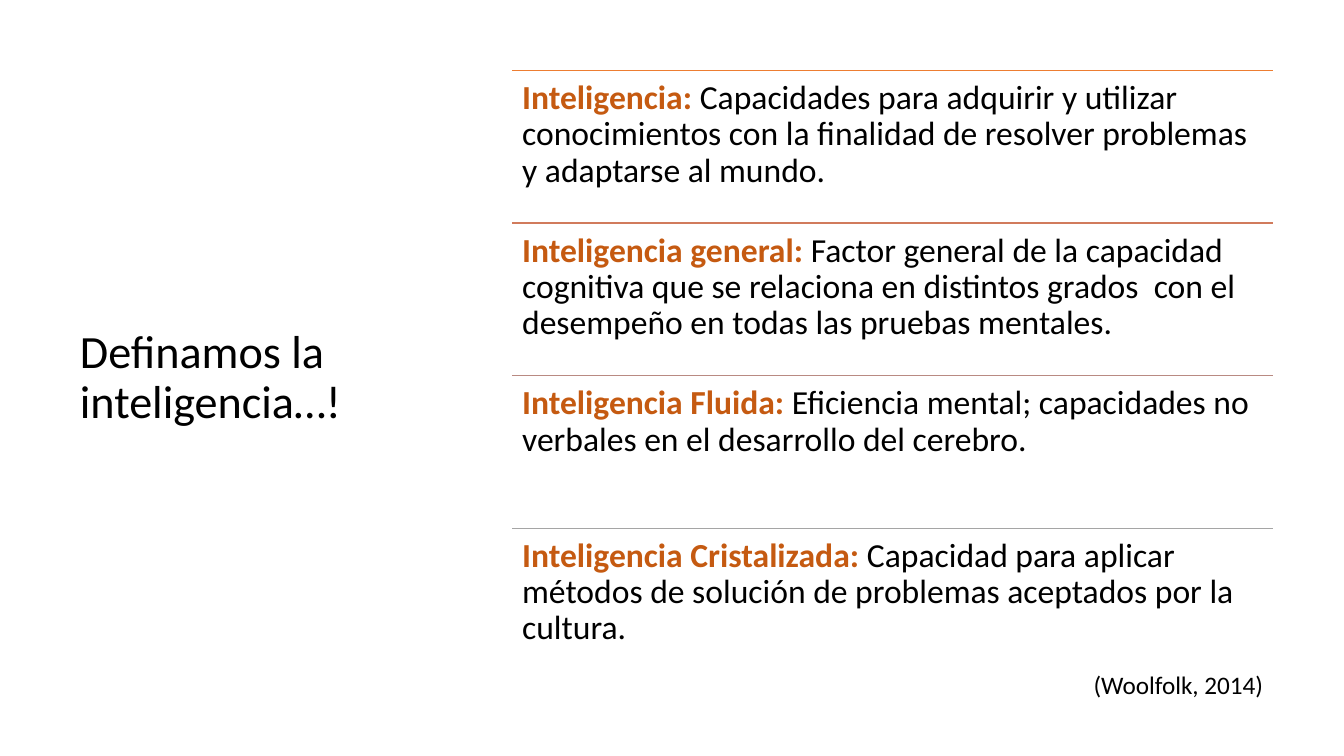
from dataclasses import dataclass

from lxml.etree import SubElement
from pptx import Presentation
from pptx.dml.color import RGBColor
from pptx.enum.shapes import MSO_CONNECTOR
from pptx.enum.text import MSO_ANCHOR, PP_ALIGN
from pptx.oxml.ns import qn
from pptx.util import Pt


@dataclass(frozen=True)
class Theme:
    font: str = "Calibri"
    ink: str = "000000"
    term: str = "C55A11"
    rules: tuple = ("ED7D31", "D17B5C", "B98A82", "A5A5A5")
    title_size: int = 33
    body_size: int = 24
    citation_size: int = 18


class SlideBuilder:
    def __init__(self, slide, theme):
        self.slide = slide
        self.theme = theme

    def text(self, box, runs, size, spacing=1.0, anchor=MSO_ANCHOR.TOP,
             align=PP_ALIGN.LEFT, inset_y=3.6):
        """Add one paragraph; runs holds (wording, is_term) pairs."""
        frame = self.slide.shapes.add_textbox(*map(Pt, box)).text_frame
        frame.word_wrap = True
        frame.vertical_anchor = anchor
        frame.margin_left = frame.margin_right = Pt(7.2)
        frame.margin_top = frame.margin_bottom = Pt(inset_y)
        paragraph = frame.paragraphs[0]
        paragraph.alignment = align
        paragraph.line_spacing = spacing
        paragraph.font.name = self.theme.font
        paragraph.font.size = Pt(size)
        for wording, is_term in runs:
            run = paragraph.add_run()
            run.text = wording
            run.font.bold = is_term
            color = self.theme.term if is_term else self.theme.ink
            run.font.color.rgb = RGBColor.from_string(color)

    def rule(self, left, top, width, color):
        line = self.slide.shapes.add_connector(
            MSO_CONNECTOR.STRAIGHT, Pt(left), Pt(top), Pt(left + width), Pt(top))
        line.line.color.rgb = RGBColor.from_string(color)
        line.line.width = Pt(1)
        SubElement(line._element.spPr, qn("a:effectLst"))

    def definition(self, box, term, meaning, color):
        left, top, width, _ = box
        self.rule(left, top, width, color)
        self.text(box, [(term + " ", True), (meaning, False)],
                  self.theme.body_size, spacing=0.9, inset_y=7.2)


DEFINITIONS = [
    ("Inteligencia:",
     "Capacidades para adquirir y utilizar conocimientos con la finalidad de "
     "resolver problemas y adaptarse al mundo."),
    ("Inteligencia general:",
     "Factor general de la capacidad cognitiva que se relaciona en distintos "
     "grados  con el desempeño en todas las pruebas mentales."),
    ("Inteligencia Fluida:",
     "Eficiencia mental; capacidades no verbales en el desarrollo del cerebro."),
    ("Inteligencia Cristalizada:",
     "Capacidad para aplicar métodos de solución de problemas aceptados por "
     "la cultura."),
]
LIST_LEFT, LIST_TOP, LIST_WIDTH, ROW_HEIGHT = 365.9, 50.3, 543.6, 109


def main():
    presentation = Presentation()
    presentation.slide_width, presentation.slide_height = Pt(960), Pt(540)
    theme = Theme()
    builder = SlideBuilder(
        presentation.slides.add_slide(presentation.slide_layouts[6]), theme)

    builder.text((50, 50.3, 269, 440), [("Definamos la inteligencia…!", False)],
                 theme.title_size, spacing=0.9, anchor=MSO_ANCHOR.MIDDLE)
    for row, ((term, meaning), color) in enumerate(zip(DEFINITIONS, theme.rules)):
        box = (LIST_LEFT, LIST_TOP + row * ROW_HEIGHT, LIST_WIDTH, ROW_HEIGHT)
        builder.definition(box, term, meaning, color)
    builder.text((694, 474.5, 215.5, 29), [("(Woolfolk, 2014)", False)],
                 theme.citation_size, align=PP_ALIGN.RIGHT)

    presentation.save("out.pptx")


if __name__ == "__main__":
    main()
